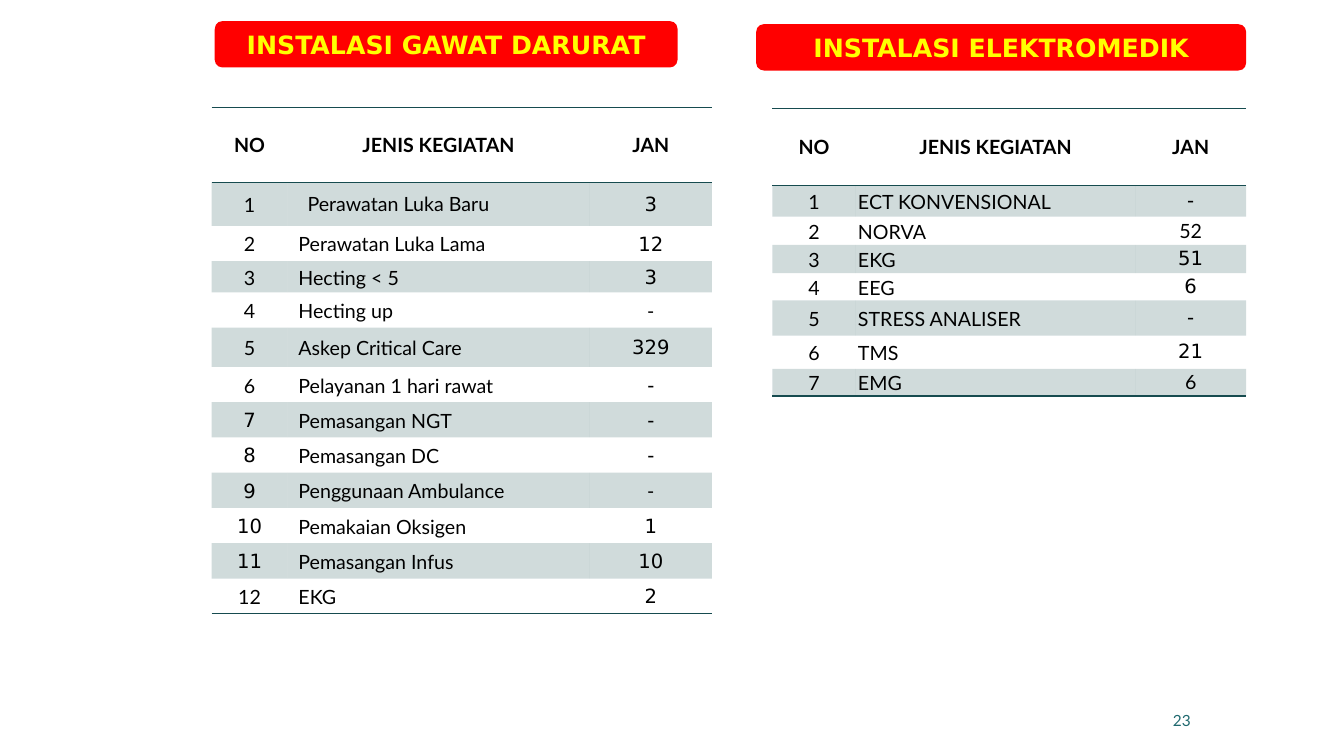
import dataclasses
import typing

import lxml.etree
import pptx
import pptx.dml.color
import pptx.enum.shapes
import pptx.enum.text
import pptx.oxml.ns
import pptx.util

EMU_PER_PX = 9144  # 100 px to the inch
RED = pptx.dml.color.RGBColor(0xFF, 0x00, 0x00)
YELLOW = pptx.dml.color.RGBColor(0xFF, 0xFF, 0x00)
BLACK = pptx.dml.color.RGBColor(0x00, 0x00, 0x00)
TEAL = pptx.dml.color.RGBColor(0x16, 0x4B, 0x4F)
PAGE_TEAL = pptx.dml.color.RGBColor(0x1F, 0x69, 0x6F)
LATO = "Lato"
DEJAVU = "DejaVu Sans"
NO_STYLE_NO_GRID = "{2D5ABB26-0587-4C30-8999-92F81FD0307C}"
LEFT = pptx.enum.text.PP_ALIGN.LEFT
CENTER = pptx.enum.text.PP_ALIGN.CENTER
RIGHT = pptx.enum.text.PP_ALIGN.RIGHT
MIDDLE = pptx.enum.text.MSO_ANCHOR.MIDDLE
HEADINGS = ("NO", "JENIS KEGIATAN", "JAN")

Format = dict[str, typing.Any]
Insets = tuple[int, int, int, int]

BANNER_FORMAT: Format = {"name": DEJAVU, "size": pptx.util.Pt(18), "bold": True}
HEADING_FORMAT: Format = {"name": LATO, "size": pptx.util.Pt(14), "bold": True}
CELL_FORMAT: Format = {"size": pptx.util.Pt(14), "bold": False}
PAGE_FORMAT: Format = {"name": LATO, "size": pptx.util.Pt(11)}
TIGHT: Insets = (2, 2, 2, 0)


class Box(typing.NamedTuple):
    left: int
    top: int
    width: int
    height: int


@dataclasses.dataclass
class Activity:
    height: int
    name: str
    january: str
    number_font: str = LATO
    january_font: str = DEJAVU
    name_insets: Insets | None = None


@dataclasses.dataclass
class Unit:
    title: str
    banner: Box
    left: int
    top: int
    columns: tuple[int, int, int]
    heading_height: int
    heading_insets: Insets
    name_insets: Insets
    january_insets: Insets
    activities: list[Activity]


UNITS = [
    Unit(
        "INSTALASI GAWAT DARURAT", Box(213, 21, 459, 46), 210, 107, (75, 300, 121),
        74, (20, 7, 20, 7), (11, 2, 2, 0), TIGHT,
        [
            Activity(43, "Perawatan Luka Baru", "3", name_insets=(20, 7, 20, 7)),
            Activity(35, "Perawatan Luka Lama", "12"),
            Activity(31, "Hecting < 5", "3"),
            Activity(35, "Hecting up", "-", january_font=LATO),
            Activity(39, "Askep Critical Care", "329"),
            Activity(35, "Pelayanan 1 hari rawat", "-"),
            Activity(35, "Pemasangan NGT", "-", DEJAVU),
            Activity(35, "Pemasangan DC", "-", DEJAVU),
            Activity(35, "Penggunaan Ambulance", "-", DEJAVU, LATO),
            Activity(35, "Pemakaian Oksigen", "1", DEJAVU),
            Activity(35, "Pemasangan Infus", "10", DEJAVU),
            Activity(35, "EKG", "2"),
        ],
    ),
    Unit(
        "INSTALASI ELEKTROMEDIK", Box(750, 24, 486, 46), 766, 108, (83, 277, 110),
        76, (20, 8, 20, 8), TIGHT, (0, 0, 0, 0),
        [
            Activity(31, "ECT KONVENSIONAL", "-"),
            Activity(28, "NORVA", "52", january_font=LATO),
            Activity(28, "EKG", "51"),
            Activity(27, "EEG", "6"),
            Activity(35, "STRESS ANALISER", "-"),
            Activity(33, "TMS", "21"),
            Activity(27, "EMG", "6", january_font=LATO),
        ],
    ),
]


def px(length: int) -> pptx.util.Emu:
    return pptx.util.Emu(length * EMU_PER_PX)


def write(frame: typing.Any, text: str, align: typing.Any,
          color: pptx.dml.color.RGBColor, values: Format) -> None:
    para = frame.paragraphs[0]
    para.alignment = align
    span = para.add_run()
    span.text = text
    span.font.color.rgb = color
    for name, value in values.items():
        setattr(span.font, name, value)


def add_banner(page: typing.Any, title: str, box: Box) -> None:
    banner = page.shapes.add_shape(
        pptx.enum.shapes.MSO_SHAPE.ROUNDED_RECTANGLE, *map(px, box))
    banner.shadow.inherit = False
    banner.fill.solid()
    banner.fill.fore_color.rgb = RED
    banner.line.fill.background()
    banner.text_frame.word_wrap = True
    banner.text_frame.vertical_anchor = MIDDLE
    write(banner.text_frame, title, CENTER, YELLOW, BANNER_FORMAT)


def add_rule(cell: typing.Any, edge: str) -> None:
    """Draw a 1 pt line on the edge lnT or lnB; call before filling the cell."""
    qn = pptx.oxml.ns.qn
    line = lxml.etree.SubElement(cell._tc.get_or_add_tcPr(), qn(f"a:{edge}"),
                                 w=str(pptx.util.Pt(1)))
    solid = lxml.etree.SubElement(line, qn("a:solidFill"))
    lxml.etree.SubElement(solid, qn("a:srgbClr"), val=str(TEAL))


def shade(cell: typing.Any, banded: bool) -> None:
    if not banded:
        cell.fill.background()
        return
    cell.fill.solid()
    cell.fill.fore_color.rgb = TEAL
    qn = pptx.oxml.ns.qn
    color = cell._tc.tcPr.find(f"{qn('a:solidFill')}/{qn('a:srgbClr')}")
    lxml.etree.SubElement(color, qn("a:alpha"), val="20000")


def fill_cell(cell: typing.Any, text: str, align: typing.Any, insets: Insets,
              values: Format) -> None:
    cell.vertical_anchor = MIDDLE
    for side, inset in zip(("left", "top", "right", "bottom"), insets):
        setattr(cell, f"margin_{side}", px(inset))
    write(cell.text_frame, text, align, BLACK, values)


def add_unit_table(page: typing.Any, unit: Unit) -> None:
    heights = [unit.heading_height] + [item.height for item in unit.activities]
    box = Box(unit.left, unit.top, sum(unit.columns), sum(heights))
    table = page.shapes.add_table(len(heights), len(unit.columns), *map(px, box)).table
    table._tbl.tblPr.find(pptx.oxml.ns.qn("a:tableStyleId")).text = NO_STYLE_NO_GRID
    for column, width in zip(table.columns, unit.columns):
        column.width = px(width)

    last = len(heights) - 1
    for index, (row, height) in enumerate(zip(table.rows, heights)):
        row.height = px(height)
        for cell in row.cells:
            if index == 0:
                add_rule(cell, "lnT")
            if index in (0, last):
                add_rule(cell, "lnB")
            shade(cell, index % 2 == 1)

    for cell, heading in zip(table.rows[0].cells, HEADINGS):
        fill_cell(cell, heading, CENTER, unit.heading_insets, HEADING_FORMAT)
    for number, item in enumerate(unit.activities, 1):
        entries = (
            (str(number), CENTER, TIGHT, item.number_font),
            (item.name, LEFT, item.name_insets or unit.name_insets, LATO),
            (item.january, CENTER, unit.january_insets, item.january_font),
        )
        for cell, (text, align, insets, font) in zip(table.rows[number].cells, entries):
            fill_cell(cell, text, align, insets, CELL_FORMAT | {"name": font})


def add_page_number(page: typing.Any) -> None:
    box = page.shapes.add_textbox(*map(px, Box(880, 695, 311, 40)))
    box.text_frame.word_wrap = True
    box.text_frame.vertical_anchor = MIDDLE
    write(box.text_frame, "23", RIGHT, PAGE_TEAL, PAGE_FORMAT)


def main() -> None:
    deck = pptx.Presentation()
    deck.slide_width, deck.slide_height = px(1333), px(750)
    page = deck.slides.add_slide(deck.slide_layouts[6])
    add_page_number(page)
    for unit in UNITS:
        add_banner(page, unit.title, unit.banner)
        add_unit_table(page, unit)
    deck.save("out.pptx")


if __name__ == "__main__":
    main()
